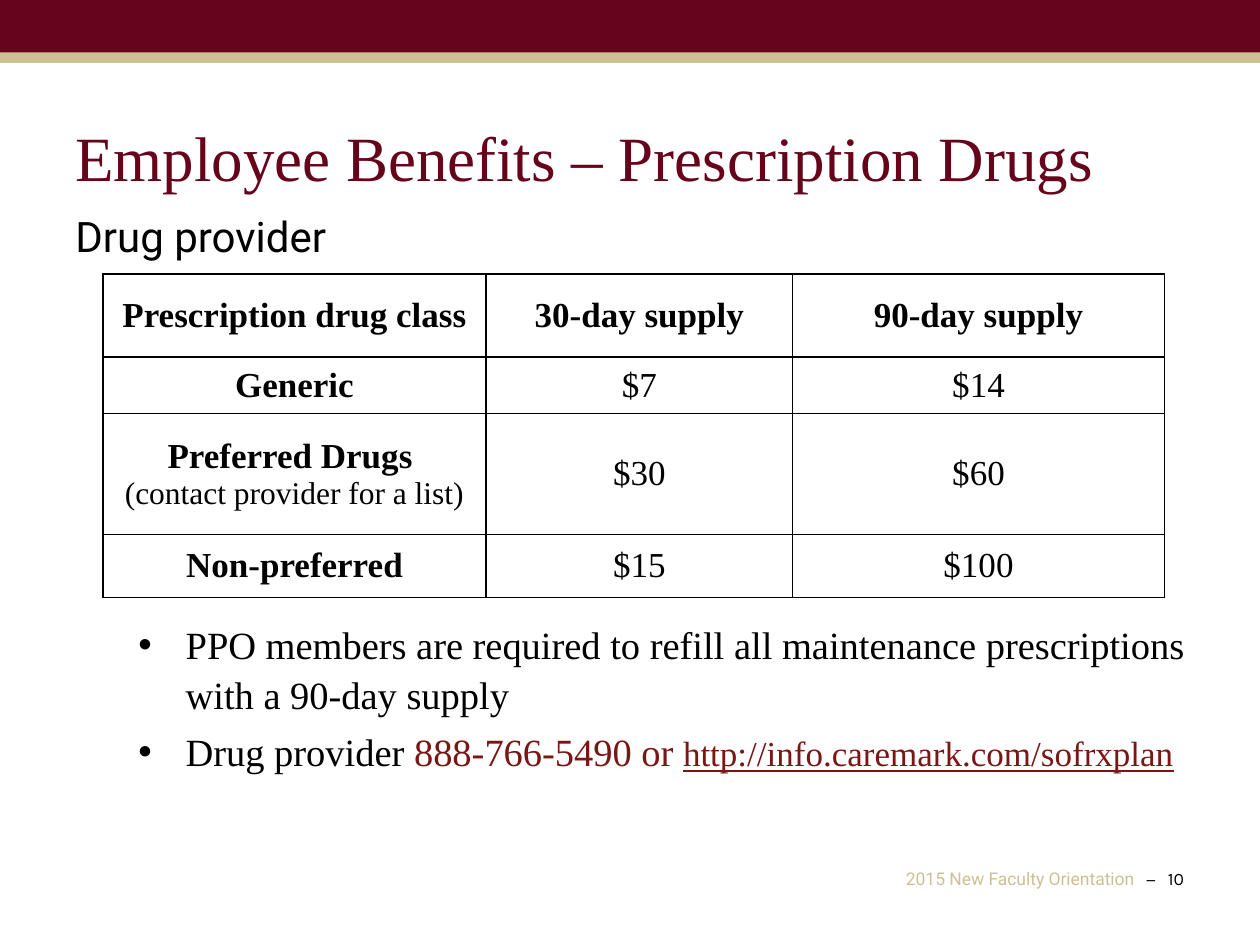
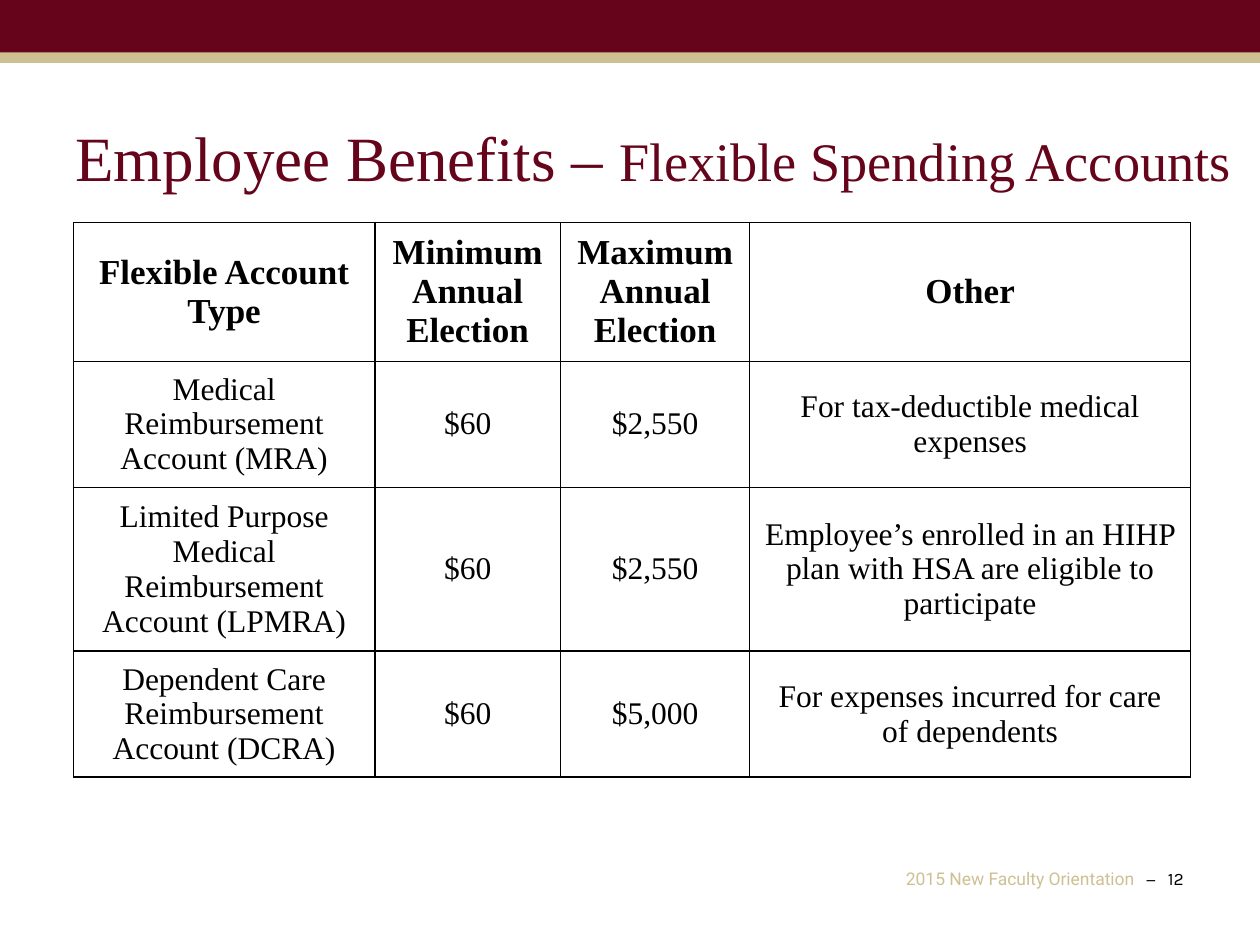
import dataclasses

import pptx
import pptx.dml.color
import pptx.enum.shapes
import pptx.enum.text
import pptx.oxml.ns
import pptx.util
from lxml import etree


@dataclasses.dataclass(frozen=True)
class Theme:
    garnet: str = "65041A"
    gold: str = "CDC093"
    ink: str = "000000"
    link: str = "791715"
    serif: str = "Times New Roman"
    sans: str = "Roboto"
    number_font: str = "Karla"
    title: int = 36
    long_title: int = 31
    subtitle: int = 24
    body: int = 22
    table_head: int = 20
    table_small: int = 18
    footer: int = 10


theme = Theme()
Inches, Pt = pptx.util.Inches, pptx.util.Pt
RGB = pptx.dml.color.RGBColor.from_string
qn = pptx.oxml.ns.qn
CENTER = pptx.enum.text.PP_ALIGN.CENTER
MIDDLE = pptx.enum.text.MSO_ANCHOR.MIDDLE
RECTANGLE = pptx.enum.shapes.MSO_SHAPE.RECTANGLE

deck = pptx.Presentation()
deck.slide_width, deck.slide_height = Inches(10), Inches(7.5)
# The page is a grid of 120 columns by 90 rows.
column, row = deck.slide_width / 120, deck.slide_height / 90


def add_span(para, text, size=theme.body, font=theme.serif, color=theme.ink,
             bold=False, underline=False):
    span = para.add_run()
    span.text = text
    span.font.size = Pt(size)
    span.font.name = font
    span.font.color.rgb = RGB(color)
    span.font.bold = bold
    span.font.underline = underline


def add_frame(page, left, top, width, height):
    """Add a wrapping text box, measured in grid columns and rows."""
    box = page.shapes.add_textbox(int(left * column), int(top * row),
                                  int(width * column), int(height * row))
    box.text_frame.word_wrap = True
    return box.text_frame


HEAD = dict(size=theme.table_head, bold=True)
VALUE = dict(size=theme.table_head)
SMALL = dict(size=theme.table_small)

# Each cell is a list of (text, format) paragraphs.
drug_cells = [
    [[("Prescription drug class", HEAD)], [("30-day supply", HEAD)],
     [("90-day supply", HEAD)]],
    [[("Generic", HEAD)], [("$7", VALUE)], [("$14", VALUE)]],
    [[("Preferred Drugs ", HEAD), ("(contact provider for a list)", SMALL)],
     [("$30", VALUE)], [("$60", VALUE)]],
    [[("Non-preferred", HEAD)], [("$15", VALUE)], [("$100", VALUE)]],
]
account_rows = [
    ("Flexible Account Type", "Minimum Annual Election",
     "Maximum Annual Election", "Other"),
    ("Medical Reimbursement Account (MRA)", "$60", "$2,550",
     "For tax-deductible medical expenses"),
    ("Limited Purpose Medical Reimbursement Account (LPMRA)", "$60", "$2,550",
     "Employee’s enrolled in an HIHP plan with HSA are eligible to participate"),
    ("Dependent Care Reimbursement Account (DCRA)", "$60", "$5,000",
     "For expenses incurred for care of dependents"),
]
account_cells = [[[(text, SMALL if index else HEAD)] for text in texts]
                 for index, texts in enumerate(account_rows)]

slides = [
    dict(number="10", topic="Prescription Drugs", topic_size=theme.title,
         corner=(9.8, 26.1), widths=(36.5, 29.2, 35.4),
         heights=(7.9, 5.4, 11.5, 6), cells=drug_cells),
    dict(number="12", topic="Flexible Spending Accounts",
         topic_size=theme.long_title,
         corner=(7, 21.2), widths=(28.7, 17.7, 18, 42),
         heights=(13.2, 12, 15.6, 12), cells=account_cells),
]

for content in slides:
    page = deck.slides.add_slide(deck.slide_layouts[6])

    for top, height, color in ((0, 5.5, theme.garnet), (5, 1, theme.gold)):
        band = page.shapes.add_shape(RECTANGLE, 0, int(top * row),
                                     deck.slide_width, int(height * row))
        band.shadow.inherit = False
        band.fill.solid()
        band.fill.fore_color.rgb = RGB(color)
        band.line.fill.background()

    footer = add_frame(page, 85.1, 82.1, 30, 3.2).paragraphs[0]
    tabs = etree.SubElement(footer._p.get_or_add_pPr(), qn("a:tabLst"))
    for stop in (22.9, 24.95):
        etree.SubElement(tabs, qn("a:tab"), pos=str(int(stop * column)), algn="l")
    add_span(footer, "2015 New Faculty Orientation", size=theme.footer,
             font=theme.sans, color=theme.gold)
    add_span(footer, "\t−\t" + content["number"], size=theme.footer,
             font=theme.number_font)

    title = add_frame(page, 6, 10.7, 113, 8).paragraphs[0]
    add_span(title, "Employee Benefits ‒ ", size=theme.title, color=theme.garnet)
    add_span(title, content["topic"], size=content["topic_size"],
             color=theme.garnet)

    left, top = content["corner"]
    widths, heights = content["widths"], content["heights"]
    table = page.shapes.add_table(
        len(heights), len(widths), int(left * column), int(top * row),
        int(sum(widths) * column), int(sum(heights) * row)).table
    table.first_row = table.horz_banding = False
    for table_column, width in zip(table.columns, widths):
        table_column.width = int(width * column)
    for table_row, height, cells in zip(table.rows, heights, content["cells"]):
        table_row.height = int(height * row)
        for cell, paragraphs in zip(table_row.cells, cells):
            cell.vertical_anchor = MIDDLE
            for index, (text, style) in enumerate(paragraphs):
                frame = cell.text_frame
                para = frame.add_paragraph() if index else frame.paragraphs[0]
                para.alignment = CENTER
                add_span(para, text, **style)
            properties = cell._tc.get_or_add_tcPr()
            for side in ("a:lnL", "a:lnR", "a:lnT", "a:lnB"):
                border = etree.SubElement(properties, qn(side), w=str(Pt(1)))
                fill = etree.SubElement(border, qn("a:solidFill"))
                etree.SubElement(fill, qn("a:srgbClr"), val=theme.ink)
            cell.fill.background()

drugs_page = deck.slides[0]
subtitle = add_frame(drugs_page, 6, 19.5, 112, 6).paragraphs[0]
add_span(subtitle, "Drug provider", size=theme.subtitle, font=theme.sans)

notes = [
    [("PPO members are required to refill all maintenance prescriptions "
      "with a 90-day supply", {})],
    [("Drug provider ", {}),
     ("888-766-5490 or ", dict(color=theme.link)),
     ("http://info.caremark.com/sofrxplan",
      dict(size=theme.table_head, color=theme.link, underline=True))],
]
frame = add_frame(drugs_page, 6, 58.2, 112, 16)
for index, spans in enumerate(notes):
    para = frame.add_paragraph() if index else frame.paragraphs[0]
    para.line_spacing = 1.08
    para.space_before = Pt(4.4 if index else 0)
    properties = para._p.get_or_add_pPr()
    properties.set("marL", str(int(10.5 * column)))
    properties.set("indent", str(int(-4.5 * column)))
    etree.SubElement(properties, qn("a:buFont"), typeface="Arial")
    etree.SubElement(properties, qn("a:buChar"), char="•")
    for text, style in spans:
        add_span(para, text, **style)

deck.save("out.pptx")
